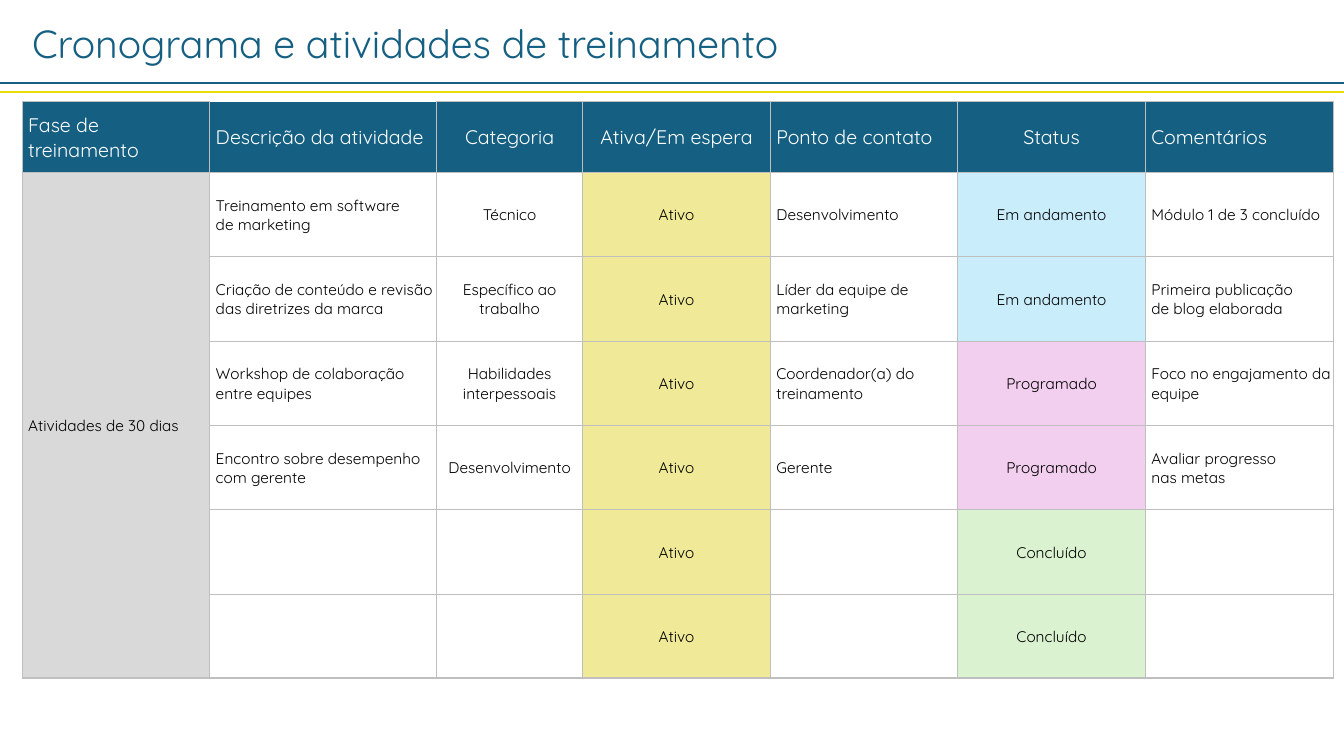
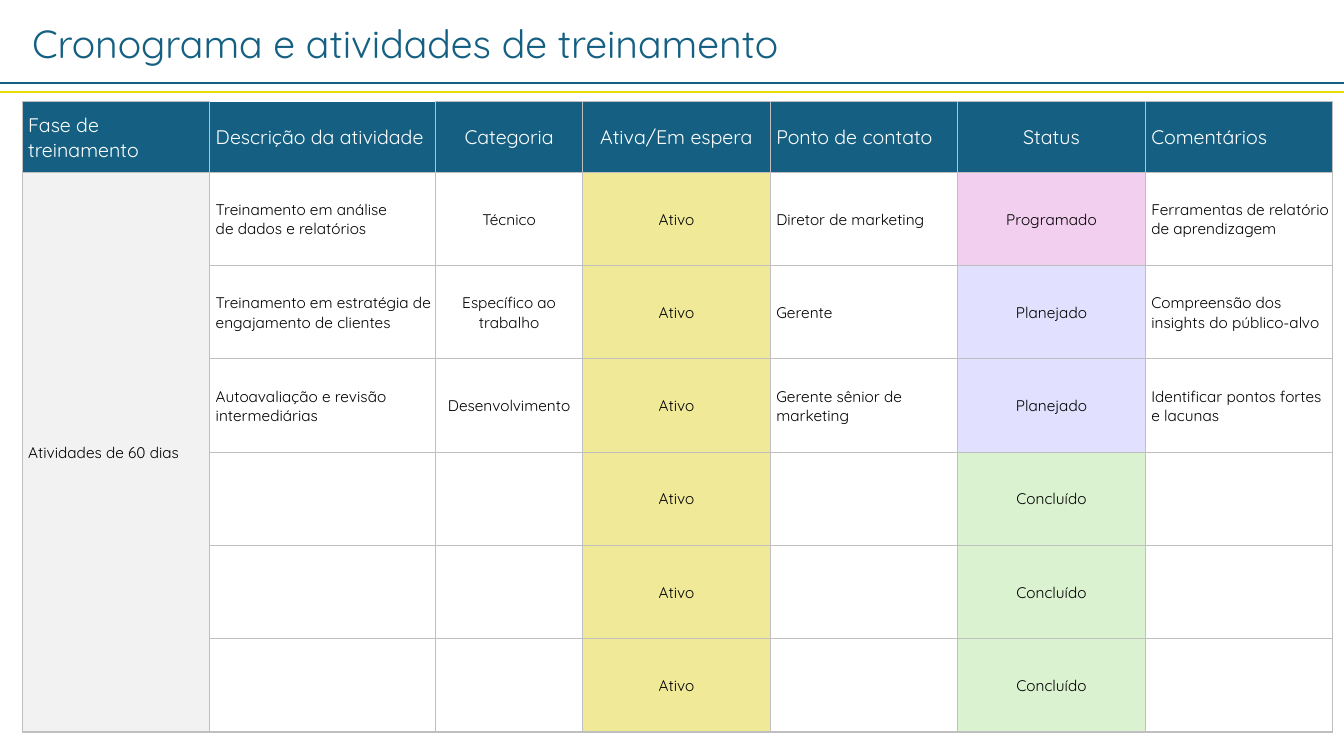
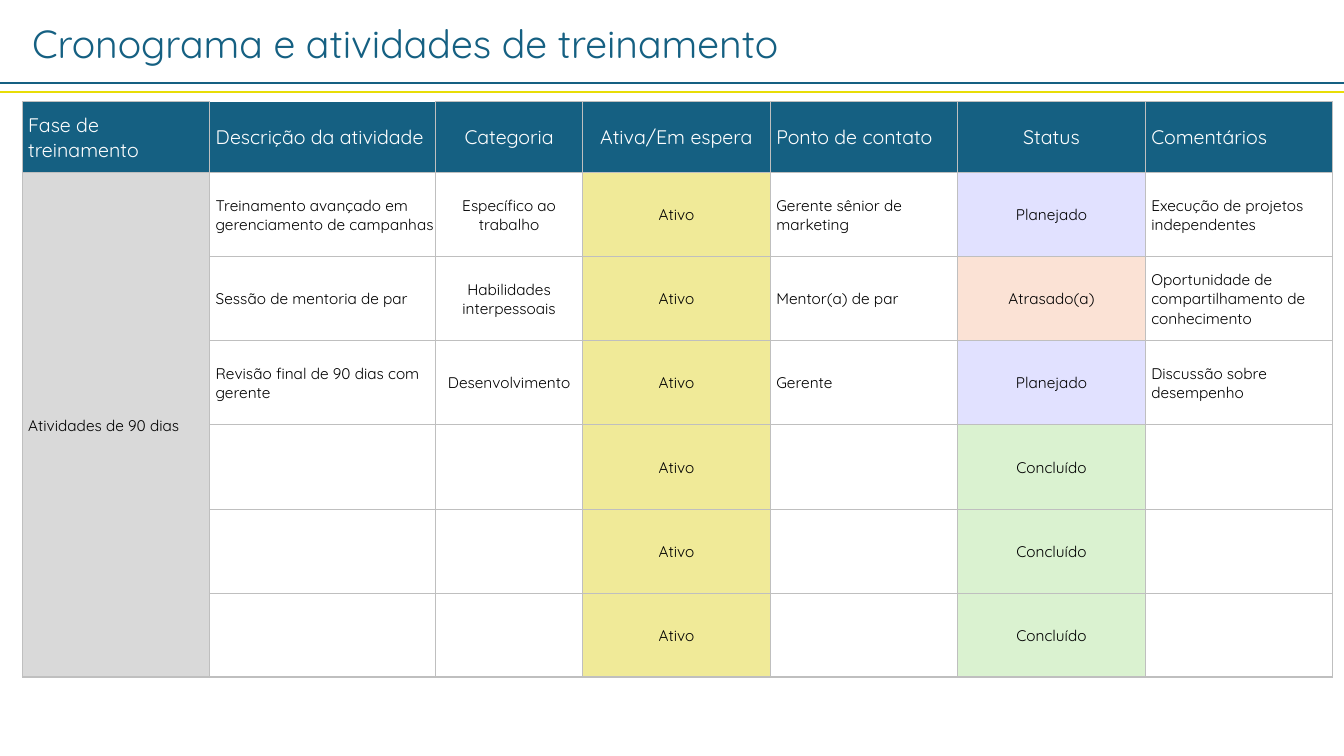
from copy import deepcopy

from lxml.etree import SubElement as Sub
from pptx import Presentation
from pptx.dml.color import RGBColor as RGB
from pptx.enum.shapes import MSO_CONNECTOR as Conn
from pptx.enum.text import MSO_ANCHOR as Anchor, MSO_AUTO_SIZE as Auto, PP_ALIGN as Align
from pptx.oxml.ns import qn
from pptx.util import Inches, Pt


class Theme:
    font = "Quicksand"
    blue, gold, edge = "156082", "E8DD06", "BFBFBF"
    white, black = "FFFFFF", "000000"
    dark, pale = "D9D9D9", "F2F2F2"
    title, head, body = 28, 14, 11
    thin, thick = 0.5, 1.5
    tags = {
        "Ativo": "F0EA98",
        "Em andamento": "CAEDFB",
        "Programado": "F2CEEF",
        "Planejado": "E1E1FF",
        "Atrasado(a)": "FBE2D5",
        "Concluído": "DAF2D0",
    }


WIDE, HIGH = 13.33, 7.5
LEFT, TOP, HEAD = 0.22, 1.01, 0.7
COL = 1.86
ROWS = 6
TITLE = "Cronograma e atividades de treinamento"
HEADS = ["Fase de treinamento", "Descrição da atividade", "Categoria", "Ativa/Em espera",
         "Ponto de contato", "Status", "Comentários"]
MIDDLE = {2, 3, 5}
BLANK = ("", "", "", "Concluído", "")

# Each task: description, category, contact, status, comment
PLANS = [
    dict(phase="Atividades de 30 dias", tint=Theme.dark, high=5.72, pair=(2.25, 1.45), span=9.84, tasks=[
        ("Treinamento em software \nde marketing", "Técnico", "Desenvolvimento",
         "Em andamento", "Módulo 1 de 3 concluído"),
        ("Criação de conteúdo e revisão das diretrizes da marca", "Específico ao trabalho",
         "Líder da equipe de marketing", "Em andamento", "Primeira publicação \nde blog elaborada"),
        ("Workshop de colaboração entre equipes", "Habilidades interpessoais",
         "Coordenador(a) do treinamento", "Programado", "Foco no engajamento da equipe"),
        ("Encontro sobre desempenho com gerente", "Desenvolvimento", "Gerente",
         "Programado", "Avaliar progresso \nnas metas"),
    ]),
    dict(phase="Atividades de 60 dias", tint=Theme.pale, high=6.25, pair=(2.24, 1.46), span=10.13, tasks=[
        ("Treinamento em análise \nde dados e relatórios", "Técnico", "Diretor de marketing",
         "Programado", "Ferramentas de relatório de aprendizagem"),
        ("Treinamento em estratégia de engajamento de clientes", "Específico ao trabalho",
         "Gerente", "Planejado", "Compreensão dos insights do público-alvo"),
        ("Autoavaliação e revisão intermediárias", "Desenvolvimento",
         "Gerente sênior de marketing", "Planejado", "Identificar pontos fortes e lacunas"),
    ]),
    dict(phase="Atividades de 90 dias", tint=Theme.dark, high=5.71, pair=(2.24, 1.46), span=9.35, tasks=[
        ("Treinamento avançado em gerenciamento de campanhas", "Específico ao trabalho",
         "Gerente sênior de marketing", "Planejado", "Execução de projetos independentes"),
        ("Sessão de mentoria de par", "Habilidades interpessoais", "Mentor(a) de par",
         "Atrasado(a)", "Oportunidade de compartilhamento de conhecimento"),
        ("Revisão final de 90 dias com gerente", "Desenvolvimento", "Gerente",
         "Planejado", "Discussão sobre desempenho"),
    ]),
]


def write(frame, text, size=Theme.body, color=Theme.black, align=Align.LEFT):
    """Fill a frame with one paragraph; line breaks take the format of its runs."""
    para = frame.paragraphs[0]
    para.text = text
    para.alignment = align
    for run in para.runs:
        run.font.name = Theme.font
        run.font.size = Pt(size)
        run.font.bold = False
        run.font.color.rgb = RGB.from_string(color)
    for gap in para._p.findall(qn("a:br")):
        gap.append(deepcopy(para.runs[0]._r.rPr))


def add_rule(slide, y, color):
    rule = slide.shapes.add_connector(Conn.STRAIGHT, 0, Inches(y), Inches(WIDE), Inches(y))
    rule.line.color.rgb = RGB.from_string(color)
    rule.line.width = Pt(Theme.thick)
    Sub(rule._element.spPr, qn("a:effectLst"))


def add_title(slide, span):
    box = slide.shapes.add_textbox(Inches(LEFT), Inches(0.14), Inches(span), Inches(0.57))
    box.text_frame.word_wrap = True
    box.text_frame.auto_size = Auto.SHAPE_TO_FIT_TEXT
    write(box.text_frame, TITLE, size=Theme.title, color=Theme.blue)


def add_edges(cell, sides, base):
    """Draw the named sides, in the order L, R, T, B; base is the bottom width."""
    props = cell._tc.get_or_add_tcPr()
    for side in sides:
        width = base if side == "B" else Theme.thin
        line = Sub(props, qn(f"a:ln{side}"), w=str(Pt(width)))
        Sub(Sub(line, qn("a:solidFill")), qn("a:srgbClr"), val=Theme.edge)


def set_cell(cell, text, mid=False, fill=None, sides="LRTB", base=Theme.thin, **form):
    add_edges(cell, sides, base)
    if fill:
        cell.fill.solid()
        cell.fill.fore_color.rgb = RGB.from_string(fill)
    else:
        cell.fill.background()
    cell.vertical_anchor = Anchor.MIDDLE
    cell.margin_left = Inches(0.01 if mid else 0.06)
    cell.margin_right = cell.margin_top = Inches(0.01)
    cell.margin_bottom = 0
    if text:
        write(cell.text_frame, text, align=Align.CENTER if mid else Align.LEFT, **form)


def add_plan(slide, phase, tint, high, pair, tasks):
    widths = [COL, *pair] + [COL] * 4
    grid = slide.shapes.add_table(ROWS + 1, len(HEADS), Inches(LEFT), Inches(TOP),
                                  Inches(sum(widths)), Inches(high)).table
    grid.first_row = grid.horz_banding = False
    for col, width in zip(grid.columns, widths):
        col.width = Inches(width)
    for row in grid.rows:
        row.height = Inches((high - HEAD) / ROWS)
    grid.rows[0].height = Inches(HEAD)

    for c, text in enumerate(HEADS):
        set_cell(grid.cell(0, c), text, mid=c in MIDDLE, fill=Theme.blue,
                 sides="LRB" if c == 1 else "LRTB", size=Theme.head, color=Theme.white)

    full = tasks + [BLANK] * (ROWS - len(tasks))
    for r, (job, kind, lead, state, note) in enumerate(full, 1):
        base = Theme.thick if r == ROWS else Theme.thin
        first = phase if r == 1 else ""
        for c, text in enumerate([first, job, kind, "Ativo", lead, state, note]):
            set_cell(grid.cell(r, c), text, mid=c in MIDDLE,
                     fill=Theme.tags.get(text) if c else tint,
                     base=Theme.thick if c == 0 else base)
    grid.cell(1, 0).merge(grid.cell(ROWS, 0))


def add_slide(deck, span, **plan):
    slide = deck.slides.add_slide(deck.slide_layouts[6])
    add_plan(slide, **plan)
    add_title(slide, span)
    add_rule(slide, 0.82, Theme.blue)
    add_rule(slide, 0.91, Theme.gold)


def main():
    deck = Presentation()
    deck.slide_width, deck.slide_height = Inches(WIDE), Inches(HIGH)
    for plan in PLANS:
        add_slide(deck, **plan)
    deck.save("out.pptx")


if __name__ == "__main__":
    main()
